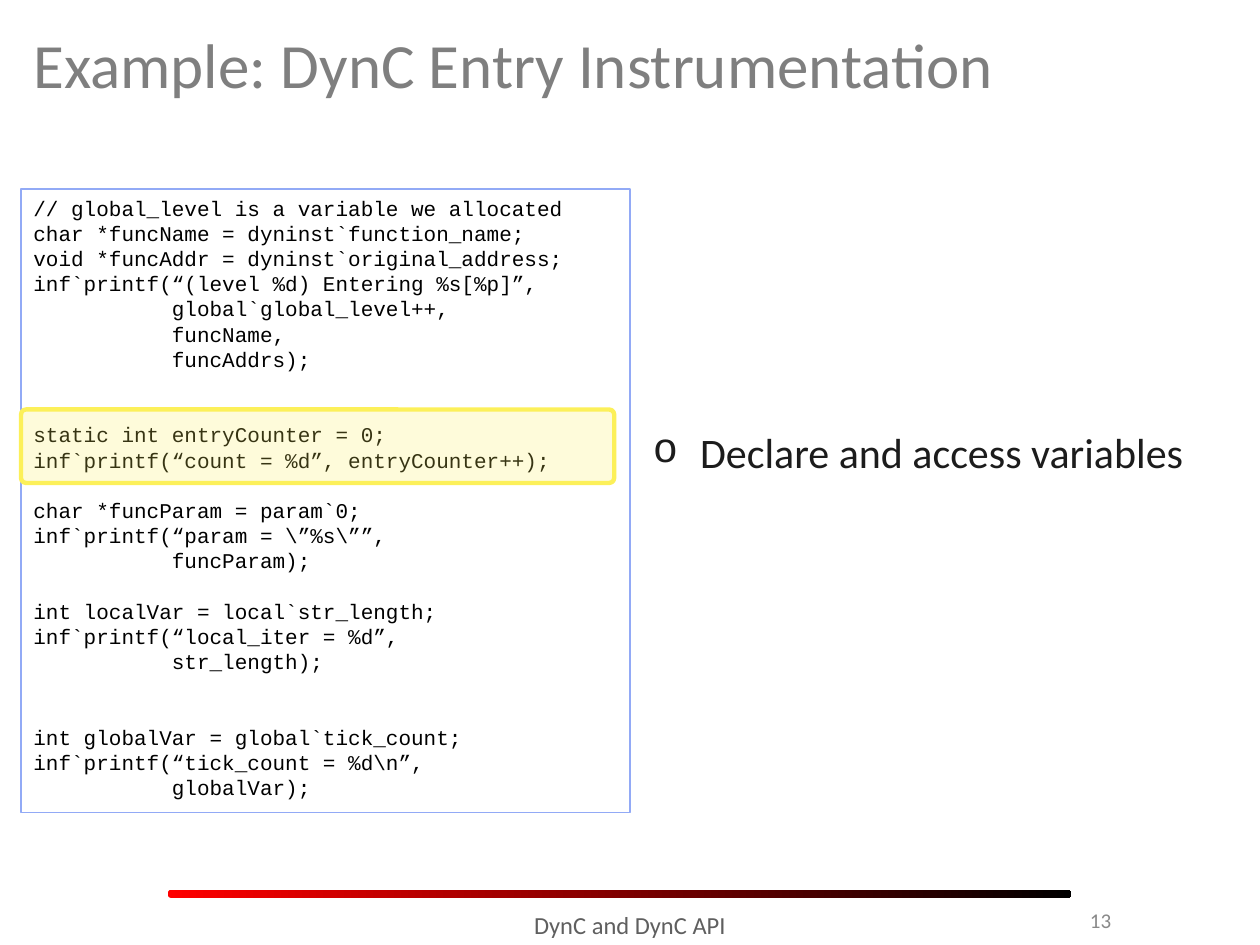
from lxml import etree
from pptx import Presentation
from pptx.dml.color import RGBColor
from pptx.enum.shapes import MSO_SHAPE
from pptx.enum.text import MSO_ANCHOR, PP_ALIGN
from pptx.oxml.ns import qn
from pptx.util import Pt

RECT, ROUNDED = MSO_SHAPE.RECTANGLE, MSO_SHAPE.ROUNDED_RECTANGLE
TOP, MIDDLE = MSO_ANCHOR.TOP, MSO_ANCHOR.MIDDLE
LEFT, CENTER, RIGHT = PP_ALIGN.LEFT, PP_ALIGN.CENTER, PP_ALIGN.RIGHT


class Theme:
    sans, mono = "Calibri", "Courier New"
    title = dict(name=sans, size=Pt(36), color="7F7F7F")
    body = dict(name=sans, size=Pt(24), color="1C1C1C")
    code = dict(name=mono, size=Pt(12), color="000000")
    footer = dict(name=sans, size=Pt(14), color="5F5F5F")
    number = dict(name=sans, size=Pt(12), color="898989")
    code_border, highlight = "92AAF6", "FCF059"
    bar = ("FF0000", "000000")
    code_line = 14.4


CODE = r"""// global_level is a variable we allocated
char *funcName = dyninst`function_name;
void *funcAddr = dyninst`original_address;
inf`printf(“(level %d) Entering %s[%p]”,
           global`global_level++,
           funcName,
           funcAddrs);


static int entryCounter = 0;
inf`printf(“count = %d”, entryCounter++);

char *funcParam = param`0;
inf`printf(“param = \”%s\””,
           funcParam);

int localVar = local`str_length;
inf`printf(“local_iter = %d”,
           str_length);


int globalVar = global`tick_count;
inf`printf(“tick_count = %d\n”,
           globalVar);"""


def points(box):
    return [Pt(v) for v in box]


def format_font(font, style):
    for key, value in style.items():
        if key == "color":
            font.color.rgb = RGBColor.from_string(value)
        else:
            setattr(font, key, value)


def set_frame(tf, anchor):
    tf.word_wrap = True
    tf.vertical_anchor = anchor


def write(p, text, style, align=LEFT):
    p.alignment = align
    r = p.add_run()
    r.text = text
    format_font(r.font, style)


def add_text(s, box, text, style, align=LEFT, anchor=TOP):
    tf = s.shapes.add_textbox(*points(box)).text_frame
    set_frame(tf, anchor)
    write(tf.paragraphs[0], text, style, align)
    return tf.paragraphs[0]


def add_plain_shape(s, kind, box):
    sp = s.shapes.add_shape(kind, *points(box))
    sp.shadow.inherit = False
    return sp


def set_line(sp, color, width):
    sp.line.color.rgb = RGBColor.from_string(color)
    sp.line.width = Pt(width)


def add_title(s, box, text):
    sp = s.shapes.title
    sp.left, sp.top, sp.width, sp.height = points(box)
    set_frame(sp.text_frame, MIDDLE)
    write(sp.text_frame.paragraphs[0], text, Theme.title)


def add_code(s, box, code):
    sp = add_plain_shape(s, RECT, box)
    sp.fill.background()
    set_line(sp, Theme.code_border, 0.75)
    tf = sp.text_frame
    set_frame(tf, TOP)
    # An empty source line becomes space before the next paragraph
    p, gap = tf.paragraphs[0], 0
    for i, line in enumerate(code.split("\n")):
        if not line:
            gap += 1
            continue
        if i:
            p = tf.add_paragraph()
        p.line_spacing = Pt(Theme.code_line)
        p.space_before = Pt(gap * Theme.code_line)
        write(p, line, Theme.code)
        gap = 0


def add_highlight(s, box):
    sp = add_plain_shape(s, ROUNDED, box)
    sp.adjustments[0] = 0.07
    sp.fill.solid()
    sp.fill.fore_color.rgb = RGBColor.from_string(Theme.highlight)
    color = sp.fill._xPr.find(".//" + qn("a:srgbClr"))
    etree.SubElement(color, qn("a:alpha"), val="22000")
    set_line(sp, Theme.highlight, 2.5)


def add_bullet(s, box, text):
    p = add_text(s, box, text, Theme.body)
    pPr = p._p.get_or_add_pPr()
    pPr.set("marL", str(Pt(27)))
    pPr.set("indent", str(-Pt(27)))
    etree.SubElement(pPr, qn("a:buFont"), typeface=Theme.mono)
    etree.SubElement(pPr, qn("a:buChar"), char="o")


def add_footer(s, box, text, number):
    left, top, width, height = box
    # Gradient bar with the caption and slide number below
    bar = add_plain_shape(s, ROUNDED, (left, top, width, 4.5))
    bar.adjustments[0] = 0.33
    bar.line.fill.background()
    bar.fill.gradient()
    bar.fill.gradient_angle = 0
    for stop, color in zip(bar.fill.gradient_stops, Theme.bar):
        stop.color.rgb = RGBColor.from_string(color)
    text_height = height - 8
    add_text(s, (left + 78, top + 8, 372, text_height), text, Theme.footer, CENTER)
    add_text(s, (left + 450, top + 3, 96, text_height), number, Theme.number,
             RIGHT, MIDDLE)


def main():
    prs = Presentation()
    prs.slide_width, prs.slide_height = Pt(720), Pt(540)
    s = prs.slides.add_slide(prs.slide_layouts[5])
    add_title(s, (12, 6, 696, 60), "Example: DynC Entry Instrumentation")
    add_code(s, (12, 108, 348, 356.4), CODE)
    add_highlight(s, (12, 234, 339, 42))
    add_bullet(s, (366, 240, 354, 36), "Declare and access variables")
    add_footer(s, (96, 508.5, 516, 36.8), "DynC and DynC API", "13")
    prs.save("out.pptx")


if __name__ == "__main__":
    main()
